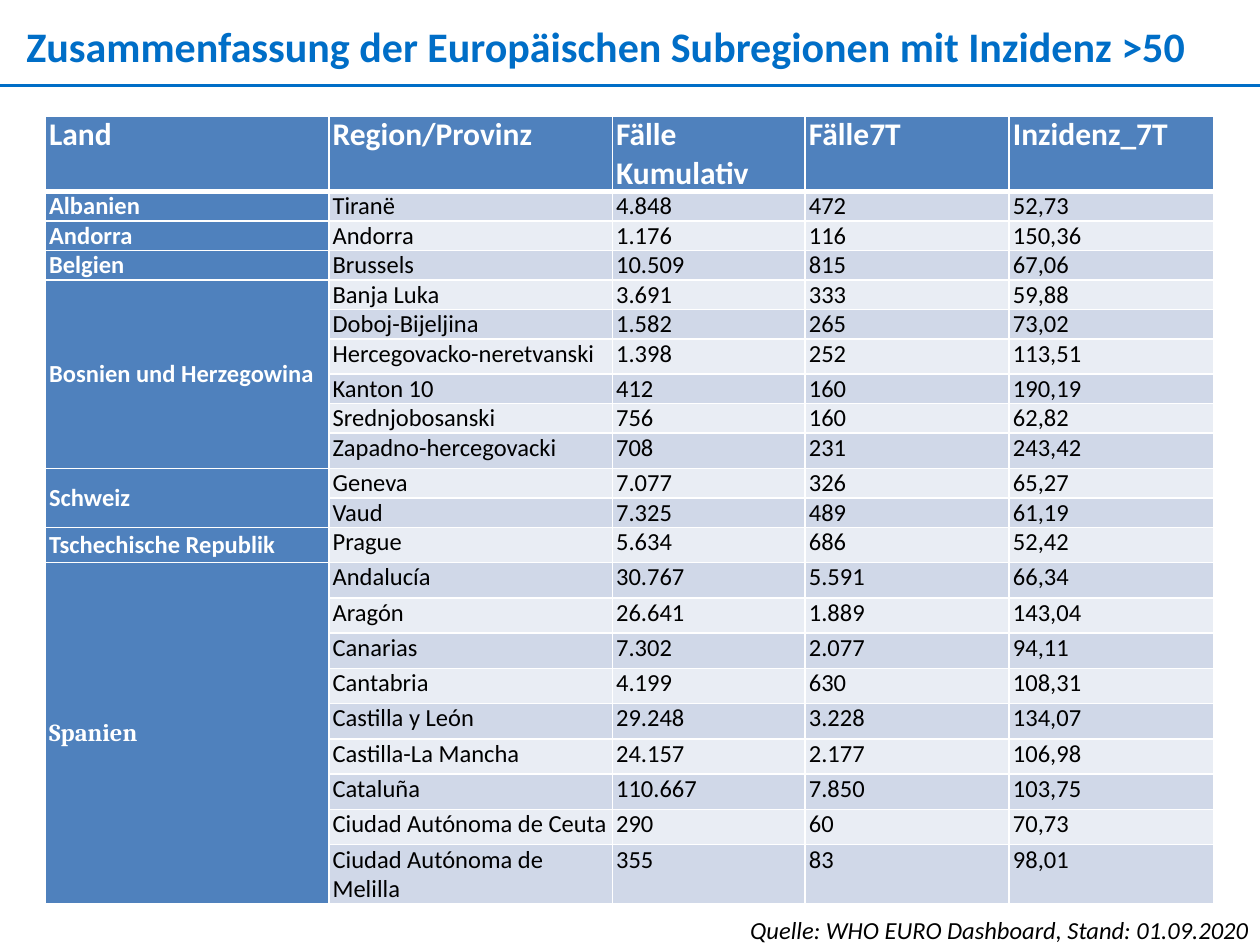
"""Builds a slide listing European subregions with a 7-day incidence above 50."""
from itertools import product

from lxml import etree
from pptx import Presentation
from pptx import util as u
from pptx.dml.color import RGBColor
from pptx.enum import shapes, text
from pptx.oxml import ns

BLUE = RGBColor(0x00, 0x6E, 0xC7)
HEAD = RGBColor(0x4F, 0x81, 0xBD)
DARK_BAND = RGBColor(0xD0, 0xD8, 0xE8)
LIGHT_BAND = RGBColor(0xE9, 0xED, 0xF4)
WHITE = RGBColor(0xFF, 0xFF, 0xFF)
BLACK = RGBColor(0x00, 0x00, 0x00)

LOW, TALL, LAST = 0.21, 0.28, 0.41
HEADINGS = ["Land", "Region/Provinz", "Fälle Kumulativ", "Fälle7T", "Inzidenz_7T"]
COUNTRIES = {
    "Albanien": [("Tiranë", "4.848", "472", "52,73", LOW)],
    "Andorra": [("Andorra", "1.176", "116", "150,36", LOW)],
    "Belgien": [("Brussels", "10.509", "815", "67,06", LOW)],
    "Bosnien und Herzegowina": [
        ("Banja Luka", "3.691", "333", "59,88", LOW),
        ("Doboj-Bijeljina", "1.582", "265", "73,02", LOW),
        ("Hercegovacko-neretvanski", "1.398", "252", "113,51", TALL),
        ("Kanton 10", "412", "160", "190,19", LOW),
        ("Srednjobosanski", "756", "160", "62,82", LOW),
        ("Zapadno-hercegovacki", "708", "231", "243,42", TALL),
    ],
    "Schweiz": [
        ("Geneva", "7.077", "326", "65,27", LOW),
        ("Vaud", "7.325", "489", "61,19", LOW),
    ],
    "Tschechische Republik": [("Prague", "5.634", "686", "52,42", TALL)],
    "Spanien": [
        ("Andalucía", "30.767", "5.591", "66,34", TALL),
        ("Aragón", "26.641", "1.889", "143,04", TALL),
        ("Canarias", "7.302", "2.077", "94,11", TALL),
        ("Cantabria", "4.199", "630", "108,31", TALL),
        ("Castilla y León", "29.248", "3.228", "134,07", TALL),
        ("Castilla-La Mancha", "24.157", "2.177", "106,98", TALL),
        ("Cataluña", "110.667", "7.850", "103,75", TALL),
        ("Ciudad Autónoma de Ceuta", "290", "60", "70,73", TALL),
        ("Ciudad Autónoma de Melilla", "355", "83", "98,01", LAST),
    ],
}


def apply(target, values):
    for name, value in values.items():
        setattr(target, name, value)


class SlideBuilder:
    def __init__(self, slide, font="Calibri"):
        self.slide = slide
        self.font = font
        self.cell_margins = dict(margin_left=u.Inches(0.03), margin_right=u.Inches(0.03),
                                 margin_top=0, margin_bottom=0)

    def add_wording(self, frame, wording, color, size, align=None, **style):
        paragraph = frame.paragraphs[0]
        paragraph.alignment = align
        run = paragraph.add_run()
        run.text = wording
        apply(run.font, {"name": self.font, "size": u.Pt(size), **style})
        run.font.color.rgb = color

    def textbox(self, box, wording, color, size, frame_format=None, **style):
        frame = self.slide.shapes.add_textbox(*map(u.Inches, box)).text_frame
        apply(frame, {"word_wrap": True, **(frame_format or {})})
        self.add_wording(frame, wording, color, size, **style)

    def line(self, start, end, color, width):
        rule = self.slide.shapes.add_connector(
            shapes.MSO_CONNECTOR.STRAIGHT, *map(u.Inches, start + end))
        rule.line.color.rgb = color
        rule.line.width = u.Pt(width)
        etree.SubElement(rule._element.spPr, ns.qn("a:effectLst"))

    def table(self, left, top, widths, heights):
        frame = self.slide.shapes.add_table(
            len(heights), len(widths), u.Inches(left), u.Inches(top),
            u.Inches(sum(widths)), u.Inches(sum(heights)))
        grid = frame.table
        apply(grid, {"first_row": False, "horz_banding": False})
        for column, width in zip(grid.columns, widths):
            column.width = u.Inches(width)
        for row, height in zip(grid.rows, heights):
            row.height = u.Inches(height)
        for row, column in product(range(len(heights)), range(len(widths))):
            self.cell_frame(grid.cell(row, column), row, column)
        return grid

    def cell_frame(self, cell, row, column):
        apply(cell, self.cell_margins)
        thick = {(0, "lnB"), (1, "lnT")}
        for side in ("lnL", "lnR", "lnT", "lnB"):
            width = u.Pt(3 if (row, side) in thick else 1)
            border = etree.SubElement(cell._tc.get_or_add_tcPr(), ns.qn(f"a:{side}"), w=str(width))
            paint = etree.SubElement(border, ns.qn("a:solidFill"))
            etree.SubElement(paint, ns.qn("a:srgbClr"), val=str(WHITE))
        band = DARK_BAND if row % 2 else LIGHT_BAND
        cell.fill.solid()
        cell.fill.fore_color.rgb = HEAD if row == 0 or column == 0 else band


def main():
    deck = Presentation()
    apply(deck, {"slide_width": u.Inches(10), "slide_height": u.Inches(7.5)})
    page = SlideBuilder(deck.slides.add_slide(deck.slide_layouts[6]))

    no_insets = dict.fromkeys(("margin_left", "margin_right", "margin_top", "margin_bottom"), 0)
    page.textbox((0.21, 0.16, 9.63, 0.4),
                 "Zusammenfassung der Europäischen Subregionen mit Inzidenz >50",
                 BLUE, 24, no_insets, bold=True)
    page.line((0, 0.68), (10, 0.68), BLUE, 1.5)
    page.textbox((5.39, 7.21, 4.62, 0.34), "Quelle: WHO EURO Dashboard, Stand: 01.09.2020",
                 BLACK, 14, align=text.PP_ALIGN.RIGHT, italic=True)

    heights = [0.53] + [region[-1] for regions in COUNTRIES.values() for region in regions]
    incidence = page.table(0.36, 0.92, [2.25, 2.25, 1.53, 1.62, 1.62], heights)
    for column, heading in enumerate(HEADINGS):
        page.add_wording(incidence.cell(0, column).text_frame, heading, WHITE, 18, bold=True)

    row = 1
    for country, regions in COUNTRIES.items():
        label = incidence.cell(row, 0)
        if len(regions) > 1:
            label.merge(incidence.cell(row + len(regions) - 1, 0))
        label.vertical_anchor = text.MSO_ANCHOR.MIDDLE
        label_font = "Cambria" if country == "Spanien" else page.font
        page.add_wording(label.text_frame, country, WHITE, 14, bold=True, name=label_font)
        for *figures, _ in regions:
            for column, figure in enumerate(figures, 1):
                page.add_wording(incidence.cell(row, column).text_frame, figure, BLACK, 14,
                                 bold=False)
            row += 1

    deck.save("out.pptx")


if __name__ == "__main__":
    main()
